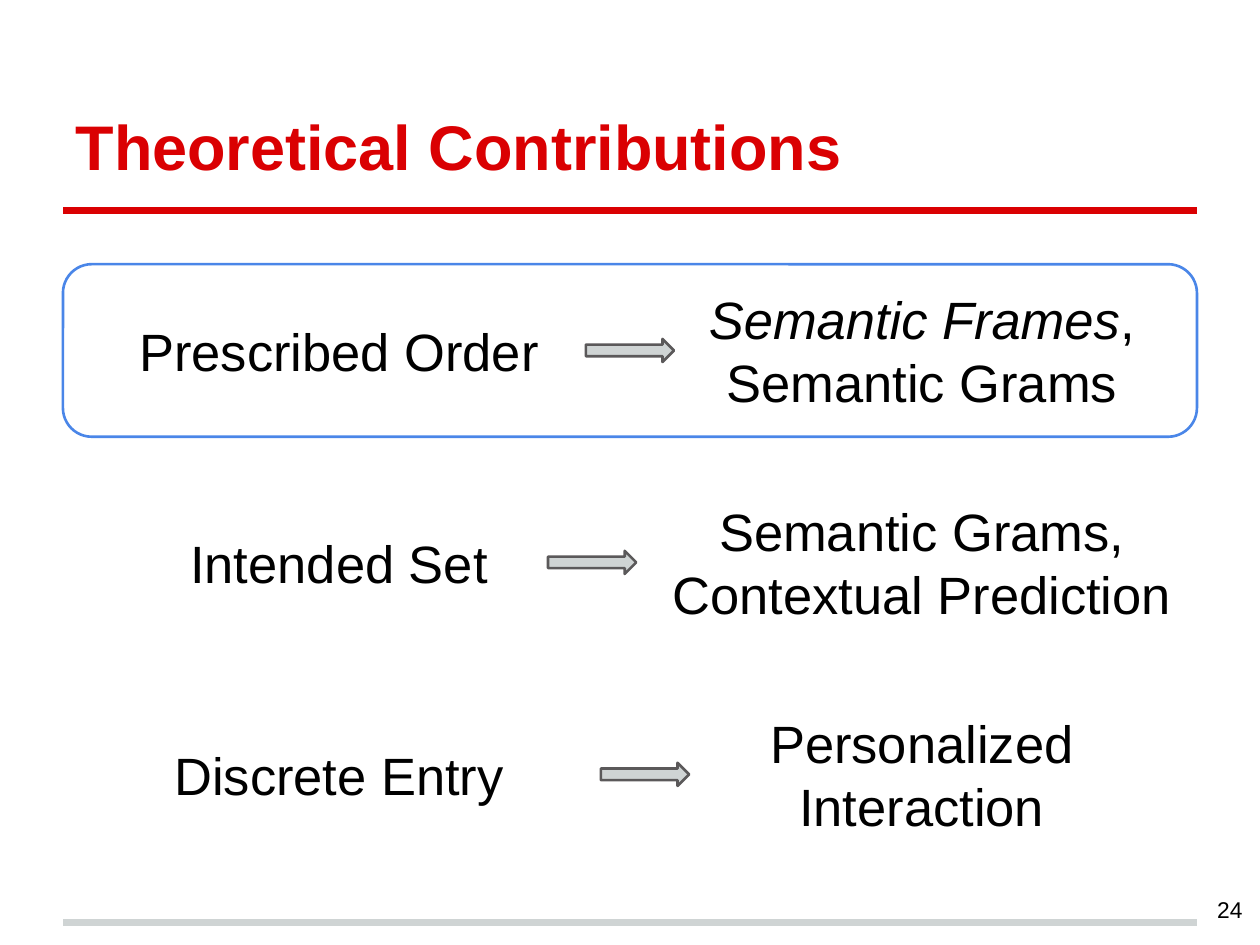
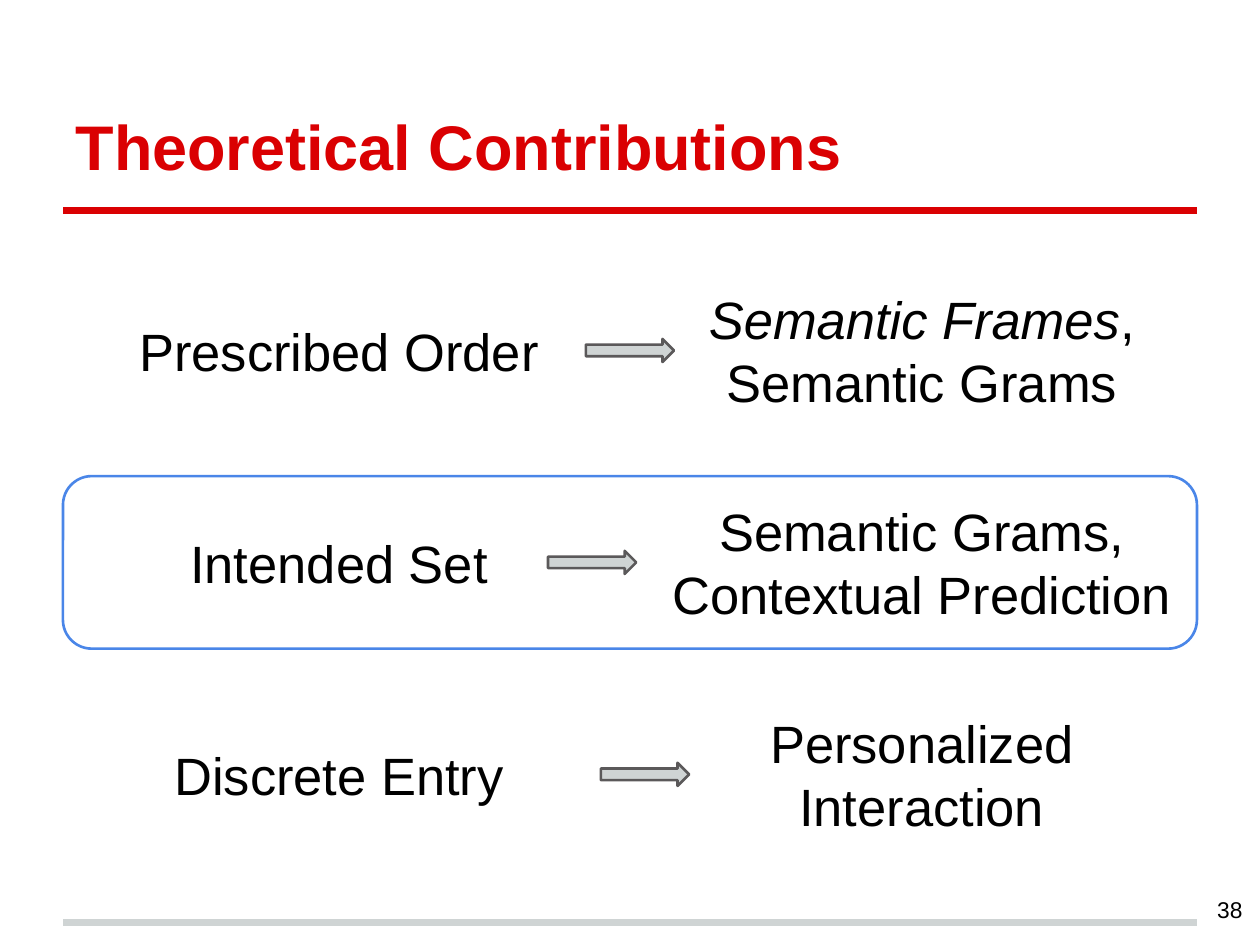
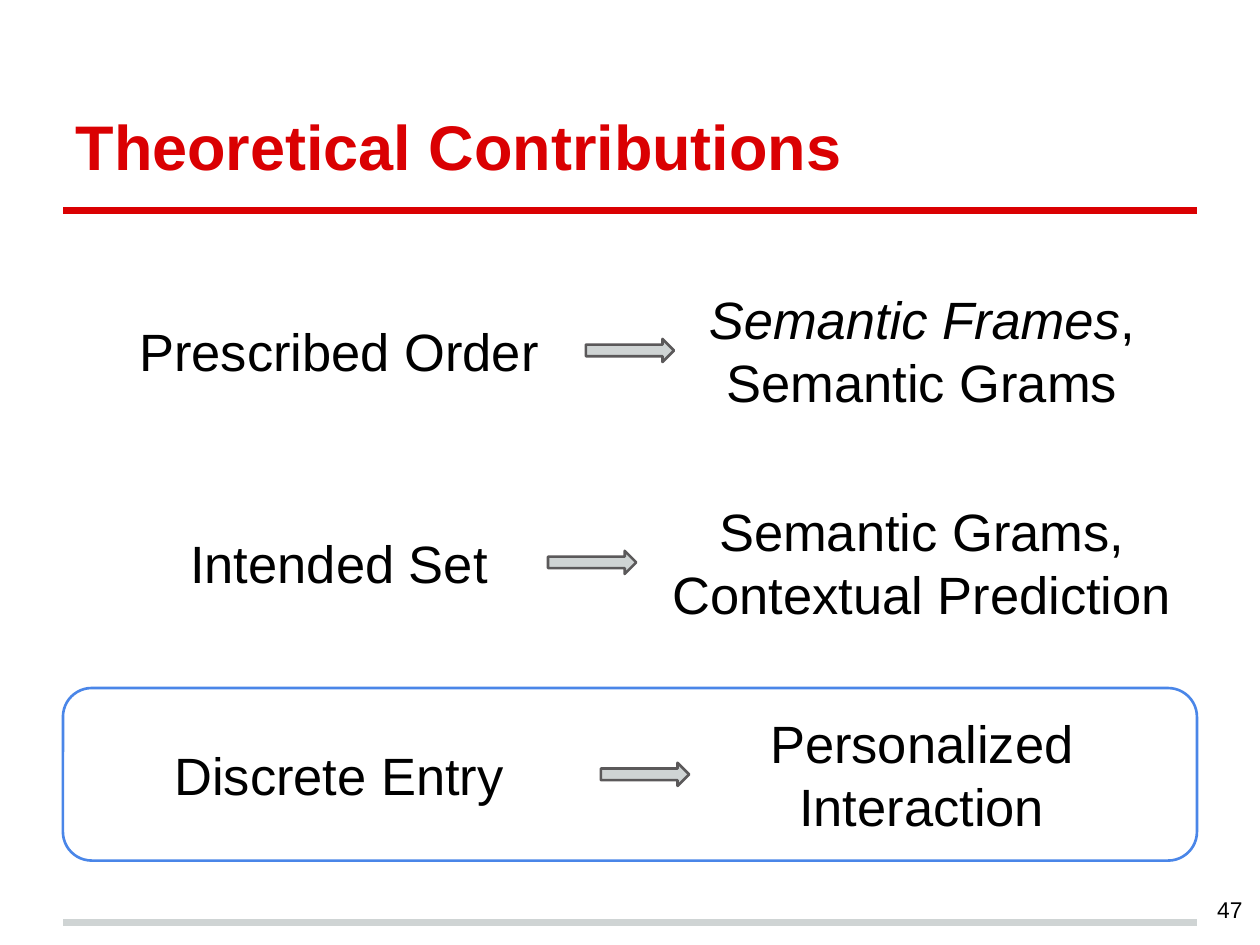
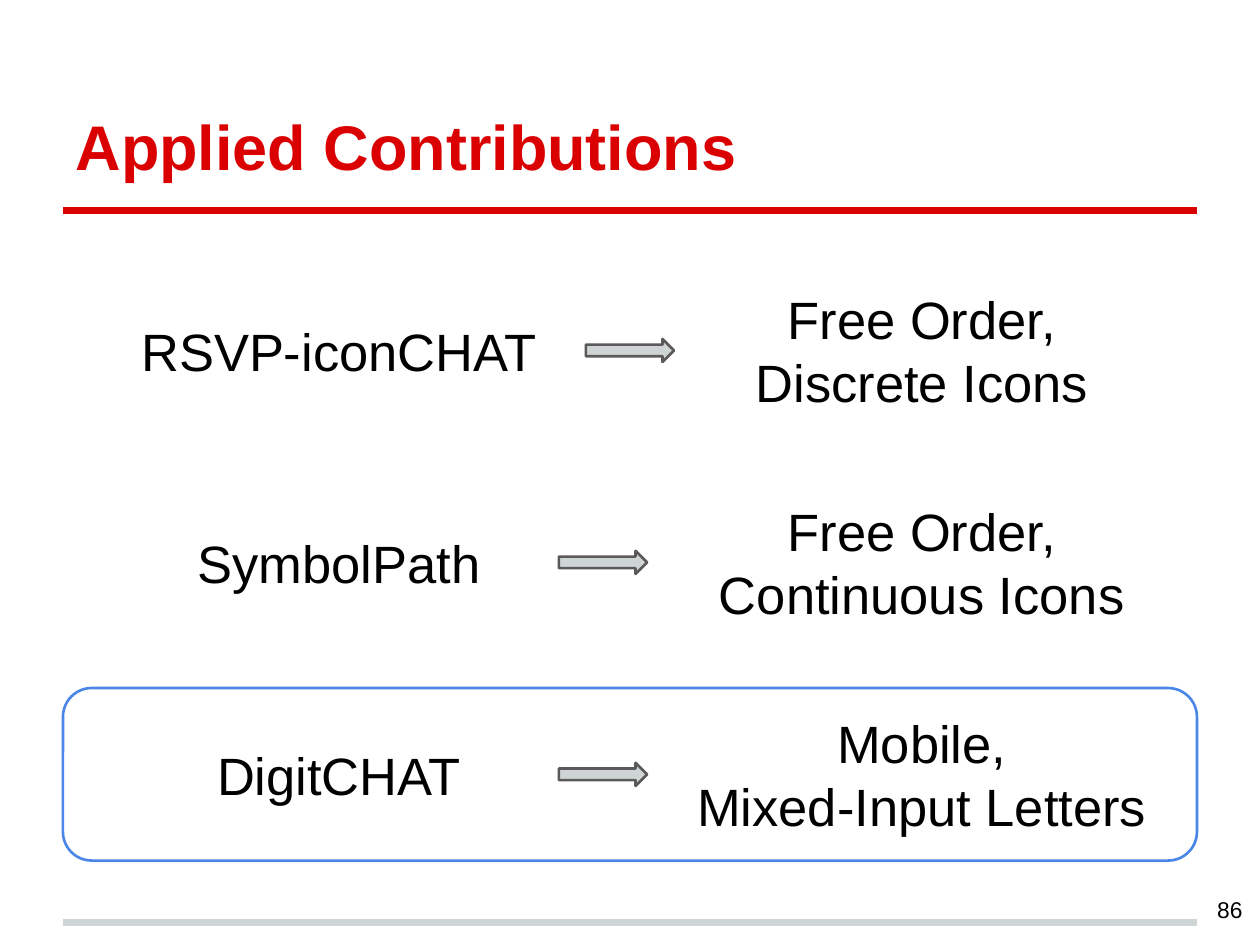
from pptx import Presentation
from pptx.dml.color import RGBColor
from pptx.enum.shapes import MSO_CONNECTOR as Link, MSO_SHAPE as Kind
from pptx.enum.text import MSO_ANCHOR as Anchor, MSO_AUTO_SIZE as Fit, PP_ALIGN as Align
from pptx.oxml.ns import qn
from pptx.util import Pt
from lxml.etree import SubElement

# Colours
RED = RGBColor(0xDA, 0x00, 0x02)
GREY = RGBColor(0xCF, 0xD4, 0xD4)
DARK = RGBColor(0x5B, 0x59, 0x5A)
BLUE = RGBColor(0x4A, 0x86, 0xE8)
BLACK = RGBColor(0x00, 0x00, 0x00)

# Grid, in points
EDGE, WIDE = 36, 648
TOP, STEP, HIGH = 151, 121.1, 98.6
LEFT, RIGHT, HALF = 36.5, 369.5, 314.6


class Deck:
    def __init__(self):
        self.prs = Presentation()
        self.prs.slide_width, self.prs.slide_height = Pt(720), Pt(540)
        self.slide = None

    def start(self, title, page):
        """Add a slide with its title, rules and page number."""
        self.slide = self.prs.slides.add_slide(self.prs.slide_layouts[5])
        head = self.slide.shapes.title
        self.place(head, EDGE, 21.6, WIDE, 90)
        self.style(head, title, 36, Align.LEFT, Anchor.BOTTOM, RED, bold=True)
        self.rule(120.2, RED)
        self.rule(527, GREY)
        self.text(673.9, 499, 43.2, 41, page, 13, Align.RIGHT)

    def place(self, shape, x, y, w, h):
        shape.left, shape.top, shape.width, shape.height = map(Pt, (x, y, w, h))

    def style(self, shape, words, size, align, anchor=Anchor.MIDDLE,
              color=BLACK, bold=False, slant=""):
        frame = shape.text_frame
        frame.text = words
        frame.word_wrap, frame.auto_size = True, Fit.NONE
        frame.vertical_anchor = anchor
        frame.margin_left = frame.margin_right = Pt(7.2)
        frame.margin_top = frame.margin_bottom = Pt(7.2)
        if slant:
            self.slant(frame.paragraphs[0], slant)
        for para in frame.paragraphs:
            para.alignment = align
            for run in para.runs:
                font = run.font
                font.name, font.size, font.bold = "Arial", Pt(size), bold
                font.color.rgb = color

    def slant(self, para, words):
        """Set the opening words of a paragraph in italics."""
        rest = para.text[len(words):]
        para.text = words
        para.runs[0].font.italic = True
        para.add_run().text = rest

    def text(self, x, y, w, h, words, size=30, align=Align.CENTER, slant=""):
        box = self.slide.shapes.add_textbox(Pt(x), Pt(y), Pt(w), Pt(h))
        self.style(box, words, size, align, slant=slant)

    def rule(self, y, color):
        line = self.slide.shapes.add_connector(
            Link.STRAIGHT, Pt(EDGE), Pt(y), Pt(EDGE + WIDE), Pt(y))
        line.line.color.rgb, line.line.width = color, Pt(4)
        SubElement(line._element.spPr, qn("a:effectLst"))

    def shape(self, kind, x, y, w, h, edge, fill=None):
        item = self.slide.shapes.add_shape(kind, Pt(x), Pt(y), Pt(w), Pt(h))
        item.shadow.inherit = False
        item.line.color.rgb, item.line.width = edge, Pt(1.5)
        if fill is None:
            item.fill.background()
        else:
            item.fill.solid()
            item.fill.fore_color.rgb = fill

    def row(self, index, name, gain, arrow, slant=""):
        """Link a name on the left to its gain on the right."""
        y = TOP + index * STEP
        self.text(LEFT, y, HALF, HIGH, name)
        self.text(RIGHT, y, HALF, HIGH, gain, slant=slant)
        self.shape(Kind.RIGHT_ARROW, arrow, y + 42.7, 50.4, 13.2, DARK, GREY)

    def frame(self, index):
        self.shape(Kind.ROUNDED_RECTANGLE, EDGE, TOP + index * STEP, WIDE, HIGH, BLUE)


# Rows: name, gain, arrow's left edge, words in italics
THEORY = [
    ("Prescribed Order", "Semantic Frames,\nSemantic Grams", 334.8, "Semantic Frames"),
    ("Intended Set", "Semantic Grams,\nContextual Prediction", 313.2),
    ("Discrete Entry", "Personalized Interaction", 343.4),
]
APPLIED = [
    ("RSVP-iconCHAT", "Free Order,\nDiscrete Icons", 334.8),
    ("SymbolPath", "Free Order,\nContinuous Icons", 319.4),
    ("DigitCHAT", "Mobile,\vMixed-Input Letters", 319.4),
]

# Slides: title, page, rows, framed row
SLIDES = [
    ("Theoretical Contributions", "24", THEORY, 0),
    ("Theoretical Contributions", "38", THEORY, 1),
    ("Theoretical Contributions", "47", THEORY, 2),
    ("Applied Contributions", "86", APPLIED, 2),
]


def main():
    deck = Deck()
    for title, page, rows, focus in SLIDES:
        deck.start(title, page)
        for index, row in enumerate(rows):
            deck.row(index, *row)
        deck.frame(focus)
    deck.prs.save("out.pptx")


if __name__ == "__main__":
    main()
